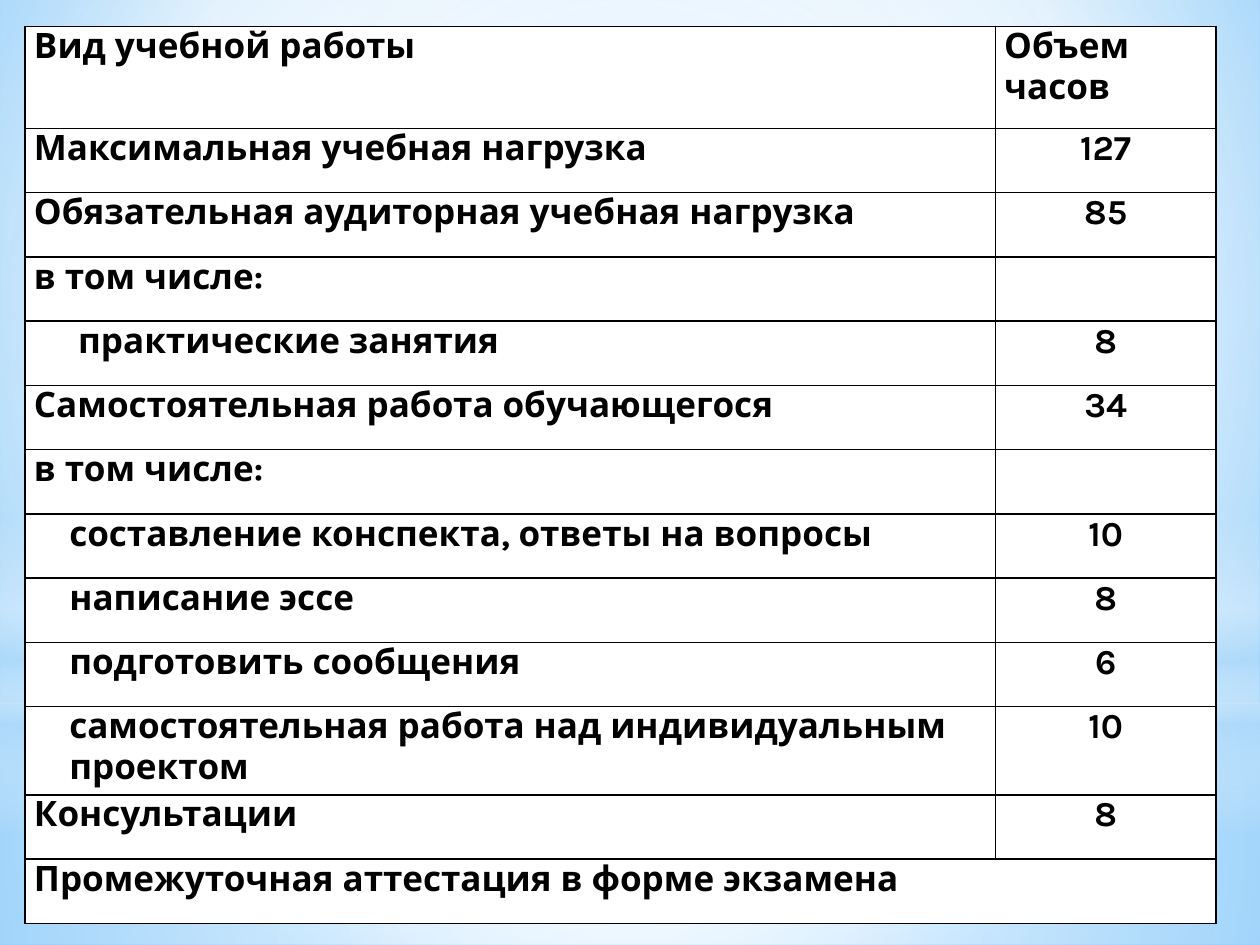
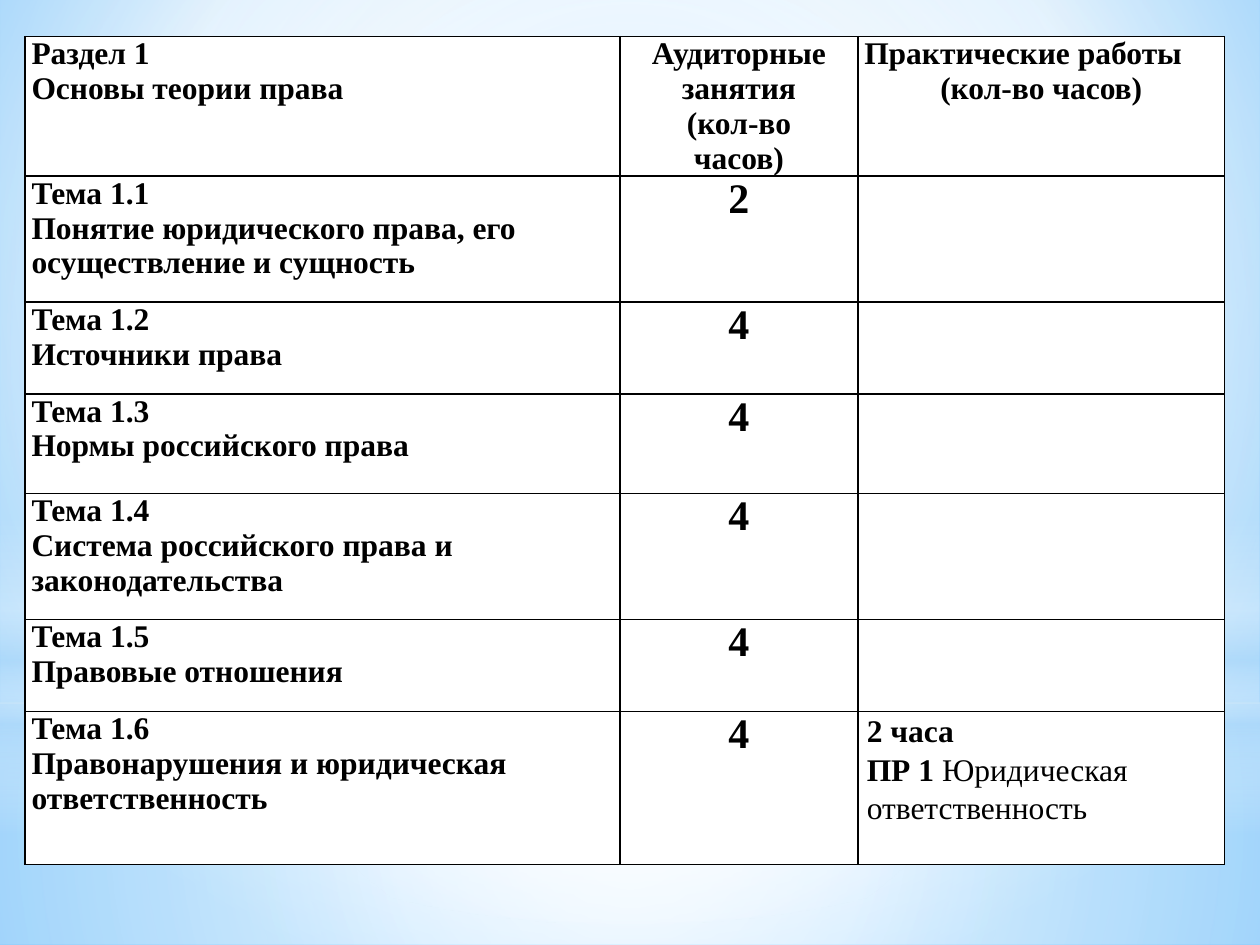
from lxml import etree
from pptx import Presentation
from pptx.dml.color import RGBColor
from pptx.enum.shapes import MSO_SHAPE
from pptx.enum.text import PP_ALIGN
from pptx.oxml.ns import nsdecls, qn
from pptx.oxml import parse_xml
from pptx.util import Inches, Pt

RECTANGLE, OVAL = MSO_SHAPE.RECTANGLE, MSO_SHAPE.OVAL
LEFT, CENTER, JUSTIFY = PP_ALIGN.LEFT, PP_ALIGN.CENTER, PP_ALIGN.JUSTIFY
COLORS = {"text": "000000", "white": "FFFFFF", "haze": "B4DCFA", "sky": "9ED5FF", "deep": "5BB9FF"}

presentation = Presentation()
presentation.slide_width = Inches(10)
presentation.slide_height = Inches(7.5)
X = presentation.slide_width / 100
Y = presentation.slide_height / 100


def set_gradient(parent, stops, focus=None):
    stop_xml = "".join(
        f'<a:gs pos="{position * 1000}"><a:srgbClr val="{COLORS[color]}">'
        f'<a:alpha val="{alpha * 1000}"/></a:srgbClr></a:gs>'
        for position, color, alpha in stops)
    direction = '<a:lin ang="5400000" scaled="0"/>'
    if focus:
        sides = " ".join(f'{side}="{share * 1000}"' for side, share in zip("ltrb", focus))
        direction = f'<a:path path="circle"><a:fillToRect {sides}/></a:path>'
    gradient = parse_xml(f'<a:gradFill {nsdecls("a")} rotWithShape="1">'
                         f'<a:gsLst>{stop_xml}</a:gsLst>{direction}</a:gradFill>')
    parent.replace(parent.find(qn("a:solidFill")), gradient)


def write_cell(cell, lines, alignment, size, indent, font, inset):
    cell.fill.solid()
    cell.fill.fore_color.rgb = RGBColor.from_string(COLORS["white"])
    cell.margin_left = cell.margin_right = Inches(inset)
    cell.margin_top = cell.margin_bottom = 0
    properties = cell._tc.get_or_add_tcPr()
    for index, side in enumerate(("lnL", "lnR", "lnT", "lnB")):
        border = etree.Element(qn(f"a:{side}"), w=str(Pt(1)))
        fill = etree.SubElement(border, qn("a:solidFill"))
        etree.SubElement(fill, qn("a:srgbClr"), val=COLORS["text"])
        properties.insert(index, border)
    if not lines:
        return
    cell.text = "\n".join(lines)
    for paragraph in cell.text_frame.paragraphs:
        paragraph.alignment = alignment
        paragraph.font.name = font
        paragraph.font.size = Pt(size)
        paragraph.font.bold = True
        paragraph.font.color.rgb = RGBColor.from_string(COLORS["text"])
        if indent:
            paragraph._p.get_or_add_pPr().set("marL", str(Inches(indent)))


blank_layout = presentation.slide_layouts[6]
slides = [presentation.slides.add_slide(blank_layout) for _ in range(2)]
master = presentation.slide_master
master.background.fill.solid()
set_gradient(master.element.find(".//" + qn("p:bgPr")),
             [(0, "sky", 100), (60, "white", 100), (100, "deep", 100)], (20, 10, 20, 60))

middle = (50, 50, 50, 50)
glows = [
    (RECTANGLE, 74.4, 25.6, [(0, "white", 91), (37, "white", 76), (100, "haze", 79)], middle),
    (RECTANGLE, 0, 74.4, [(0, "white", 89), (48, "white", 62), (100, "haze", 79)], middle),
    (RECTANGLE, 54.93, 33.33, [(0, "white", 0), (29, "white", 30), (45, "haze", 40),
                               (55, "white", 26), (65, "haze", 60), (100, "white", 0)], None),
    (OVAL, 23.33, 74.4, [(0, "white", 100), (56, "white", 0)], middle),
]
master_tree = master.element.cSld.spTree
for index, (kind, top, height, stops, focus) in enumerate(glows):
    shape = slides[0].shapes.add_shape(kind, 0, int(top * Y), int(100 * X), int(height * Y))
    shape.shadow.inherit = False
    shape.line.fill.background()
    shape.fill.solid()
    set_gradient(shape.element.spPr, stops, focus)
    shape.element.nvSpPr.cNvPr.set("id", str(100 + index))
    master_tree.insert(2 + index, shape.element)

workload = [
    (["Максимальная учебная нагрузка"], "127", 0),
    (["Обязательная аудиторная учебная нагрузка"], "85", 0),
    (["в том числе:"], "", 0),
    (["практические занятия"], "8", 0.35),
    (["Самостоятельная работа обучающегося"], "34", 0),
    (["в том числе:"], "", 0),
    (["составление конспекта, ответы на вопросы"], "10", 0.28),
    (["написание эссе"], "8", 0.28),
    (["подготовить сообщения"], "6", 0.28),
    (["самостоятельная работа над индивидуальным", "проектом"], "10", 0.28),
    (["Консультации"], "8", 0),
    (["Промежуточная аттестация в форме экзамена"], "", 0),
]
workload_rows = [[(["Вид учебной работы"], JUSTIFY, 20, 0), (["Объем часов"], JUSTIFY, 20, 0)]]
for lines, hours, indent in workload:
    workload_rows.append([(lines, JUSTIFY, 20, indent), ([hours] if hours else [], CENTER, 20, 0)])

topics = [
    ("Понятие юридического права, его осуществление и сущность", "2"),
    ("Источники права", "4"),
    ("Нормы российского права", "4"),
    ("Система российского права и законодательства", "4"),
    ("Правовые отношения", "4"),
    ("Правонарушения и юридическая ответственность", "4"),
]
topic_rows = [[
    (["Раздел 1", "Основы теории права"], LEFT, 18, 0),
    (["Аудиторные", "занятия", "(кол-во", "часов)"], CENTER, 18, 0),
    (["Практические работы", "(кол-во часов)"], LEFT, 18, 0),
]]
for number, (topic, hours) in enumerate(topics, 1):
    topic_rows.append([([f"Тема 1.{number}", topic], LEFT, 18, 0),
                       ([hours], CENTER, 24, 0), ([], LEFT, 18, 0)])
topic_rows[-1][2] = (["2 часа", "ПР 1 "], LEFT, 18, 0)

plans = [
    (2.8, [77, 17.5], [10.8] + [6.8] * 9 + [9.33] + [6.8] * 2, workload_rows, "Karla", 0.07),
    (3.87, [47.2, 18.9, 29.1], [14.75, 13.33, 9.73, 10.53, 13.33, 9.73, 16.2],
     topic_rows, "Times New Roman", 0.05),
]
tables = []
for slide, (top, widths, heights, rows, font, inset) in zip(slides, plans):
    table = slide.shapes.add_table(len(rows), len(widths), int(2 * X), int(top * Y),
                                   int(sum(widths) * X), int(sum(heights) * Y)).table
    table.first_row = table.horz_banding = False
    for column, width in zip(table.columns, widths):
        column.width = int(width * X)
    for row, height, contents in zip(table.rows, heights, rows):
        row.height = int(height * Y)
        for cell, content in zip(row.cells, contents):
            write_cell(cell, *content, font, inset)
    tables.append(table)

workload_table, topic_table = tables
workload_table.cell(12, 0).merge(workload_table.cell(12, 1))
topic_table.cell(0, 2).text_frame.paragraphs[1].alignment = CENTER

practice_cell = topic_table.cell(6, 2)
practice_cell.margin_left = practice_cell.margin_right = Inches(0.07)
for paragraph in practice_cell.text_frame.paragraphs:
    paragraph.line_spacing = 1.1
run = practice_cell.text_frame.paragraphs[1].add_run()
run.text = "Юридическая ответственность"
run.font.bold = False

presentation.save("out.pptx")
